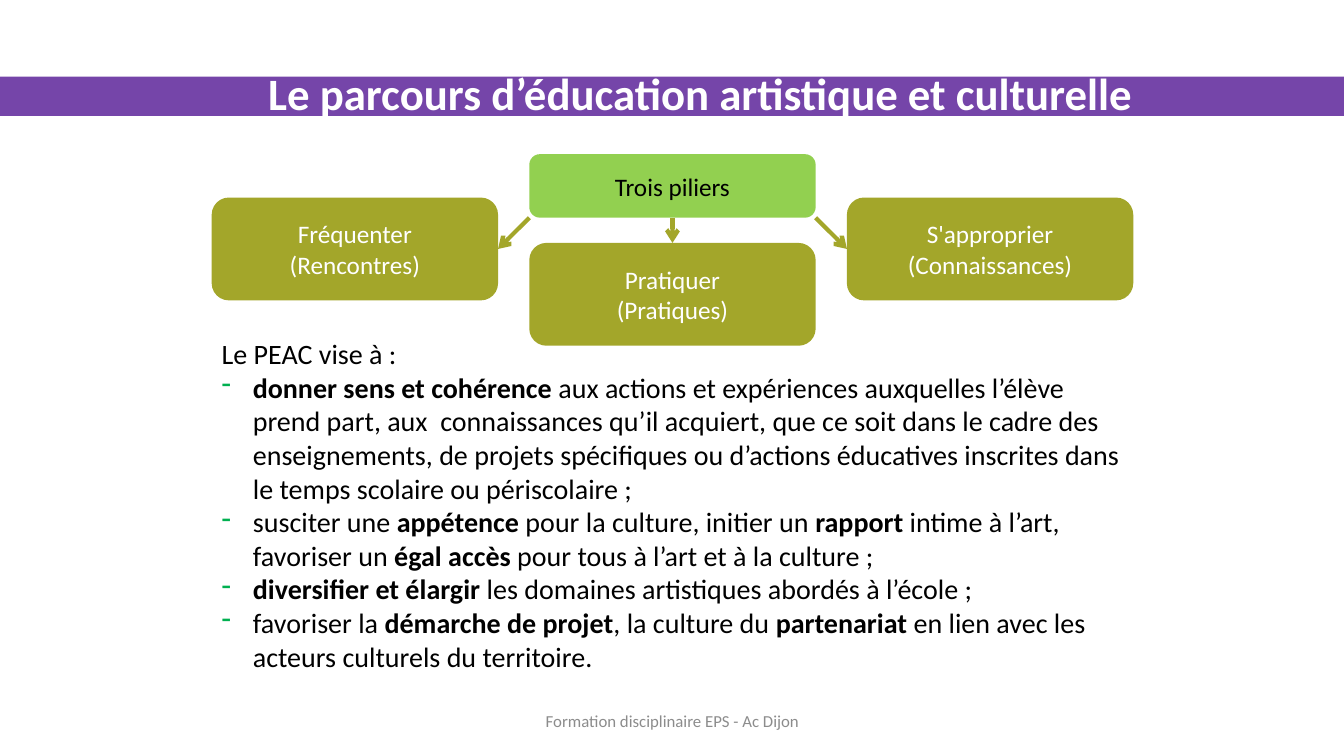
from pptx import Presentation, util as u
from pptx.dml.color import RGBColor
from pptx.enum import shapes, text
from pptx.oxml import parse_xml
from pptx.oxml.ns import nsdecls

hues = {"band": "7545A9", "top": "92D050", "box": "A3A62A", "dash": "00B050",
        "white": "FFFFFF", "black": "000000", "grey": "8C8C8C"}
ink = {k: RGBColor.from_string(v) for k, v in hues.items()}
deck = Presentation()
deck.slide_width, deck.slide_height = u.Inches(13.33), u.Inches(7.5)
slide = deck.slides.add_slide(deck.slide_layouts[5])
items = slide.shapes
left, wide, step = 2.1, 2.84, 3.15
tall = 1.02
mid, anchor = text.PP_ALIGN.CENTER, text.MSO_ANCHOR


def write(shape, lines, size, color, align, place, dash=False):
    frame = shape.text_frame
    for key, val in {"word_wrap": True, "vertical_anchor": place,
                     "auto_size": text.MSO_AUTO_SIZE.NONE}.items():
        setattr(frame, key, val)
    for n, line in enumerate(lines):
        para = frame.paragraphs[0] if n == 0 else frame.add_paragraph()
        para.alignment = align
        if dash and n:
            props = para._p.get_or_add_pPr()
            props.set("marL", str(u.Inches(0.31)))
            props.set("indent", str(-u.Inches(0.31)))
            for tag in (f'<a:buClr {nsdecls("a")}><a:srgbClr val="{hues["dash"]}"/></a:buClr>',
                        f'<a:buChar {nsdecls("a")} char="-"/>'):
                props.append(parse_xml(tag))
        for i, part in enumerate(line.split("**")):
            if part:
                run = para.add_run()
                run.text = part
                for key, val in {"name": "Calibri", "size": u.Pt(size),
                                 "bold": i % 2 == 1}.items():
                    setattr(run.font, key, val)
                run.font.color.rgb = ink[color]


def block(kind, spot, fill):
    shape = items.add_shape(kind, *map(u.Inches, spot))
    shape.shadow.inherit = False
    shape.fill.solid()
    shape.fill.fore_color.rgb = ink[fill]
    shape.line.fill.background()
    return shape


title = items.title
for key, val in zip(("left", "top", "width", "height"), (2.56, 0.63, 10.77, 0.58)):
    setattr(title, key, u.Inches(val))
write(title, ["**Le parcours d’éducation artistique et culturelle**"], 32, "white",
      text.PP_ALIGN.LEFT, anchor.MIDDLE)
band = block(shapes.MSO_SHAPE.RECTANGLE, (0, 0.76, 13.33, 0.39), "band")
title.element.addprevious(band.element)

round_box = shapes.MSO_SHAPE.ROUNDED_RECTANGLE
head = block(round_box, (left + step, 1.53, wide, 0.63), "top")
write(head, ["Trois piliers"], 18, "black", mid, anchor.MIDDLE)

pillars = [(["Fréquenter", "(Rencontres)"], 1.96, 0, 3),
           (["Pratiquer", "(Pratiques)"], 2.41, 0.5, 0),
           (["S'approprier", "(Connaissances)"], 1.96, 1, 1)]
for col, (lines, top, share, site) in enumerate(pillars):
    box = block(round_box, (left + col * step, top, wide, tall), "box")
    write(box, lines, 18, "white", mid, anchor.MIDDLE)
    x, y = head.left + int(head.width * share), head.top + head.height
    arrow = items.add_connector(shapes.MSO_CONNECTOR.STRAIGHT, x, y, x, y)
    if col == 1:
        arrow.begin_connect(head, 2)
    arrow.end_connect(box, site)
    arrow.line.color.rgb = ink["box"]
    arrow.line.width = u.Pt(3)
    arrow.line._get_or_add_ln().append(parse_xml(f'<a:tailEnd {nsdecls("a")} type="arrow"/>'))
    arrow.element.spPr.append(parse_xml(f'<a:effectLst {nsdecls("a")}/>'))

aims = [
    "Le PEAC vise à :",
    "**donner sens et cohérence **aux actions et expériences auxquelles l’élève prend part, "
    "aux  connaissances qu’il acquiert, que ce soit dans le cadre des enseignements, de projets "
    "spécifiques ou d’actions éducatives inscrites dans le temps scolaire ou périscolaire ;",
    "susciter une **appétence** pour la culture, initier un **rapport** intime à l’art, "
    "favoriser un **égal accès **pour tous à l’art et à la culture ;",
    "**diversifier et élargir **les domaines artistiques abordés à l’école ;",
    "favoriser la **démarche de projet**, la culture du **partenariat **en lien avec les "
    "acteurs culturels du territoire.",
]
body = items.add_textbox(*map(u.Inches, (left, 3.29, 2 * step + wide, 3.47)))
write(body, aims, 20, "black", text.PP_ALIGN.LEFT, anchor.TOP, True)
foot = items.add_textbox(*map(u.Inches, (4.56, 6.95, 4.22, 0.4)))
write(foot, ["Formation disciplinaire EPS - Ac Dijon"], 12, "grey", mid, anchor.MIDDLE)

deck.save("out.pptx")
